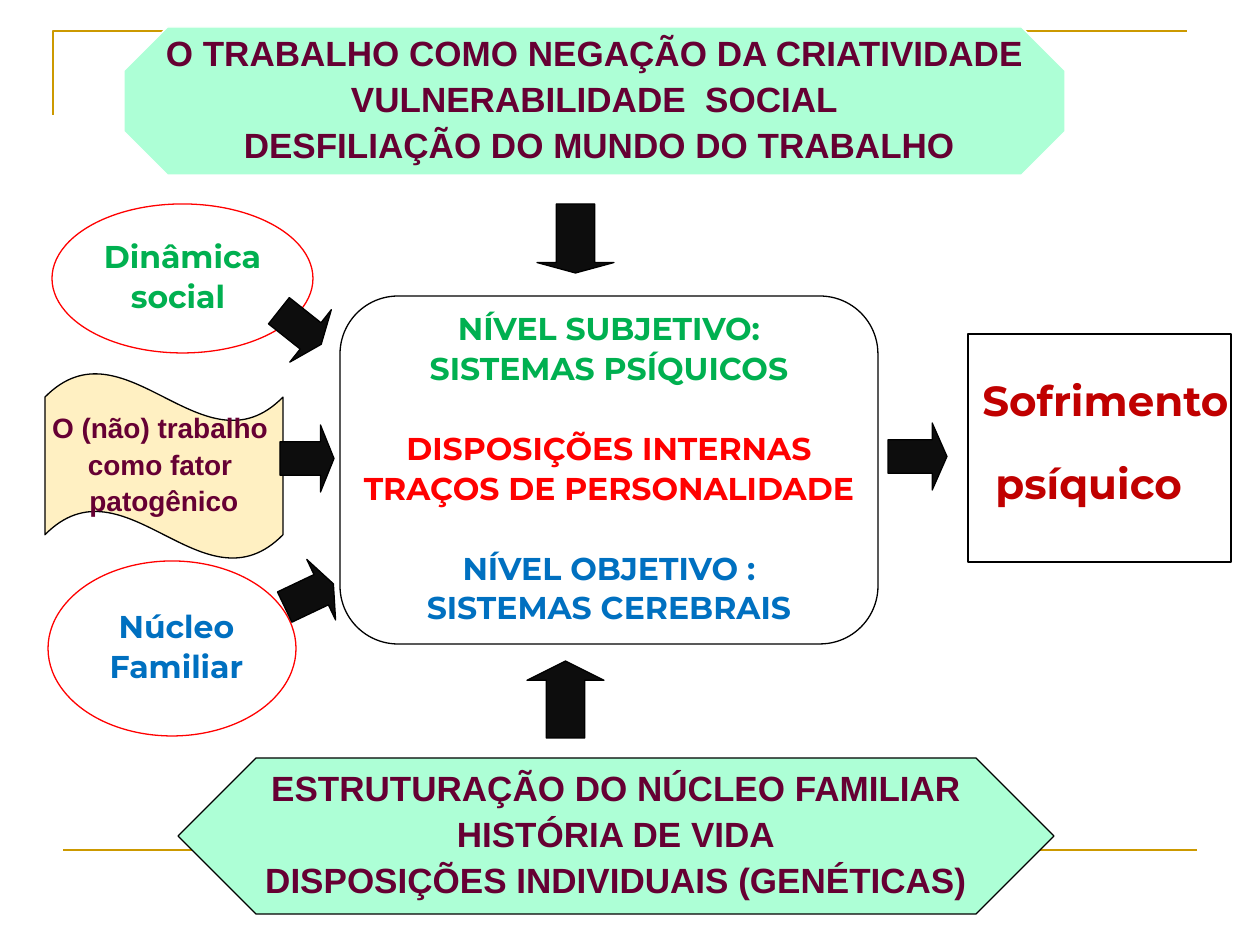
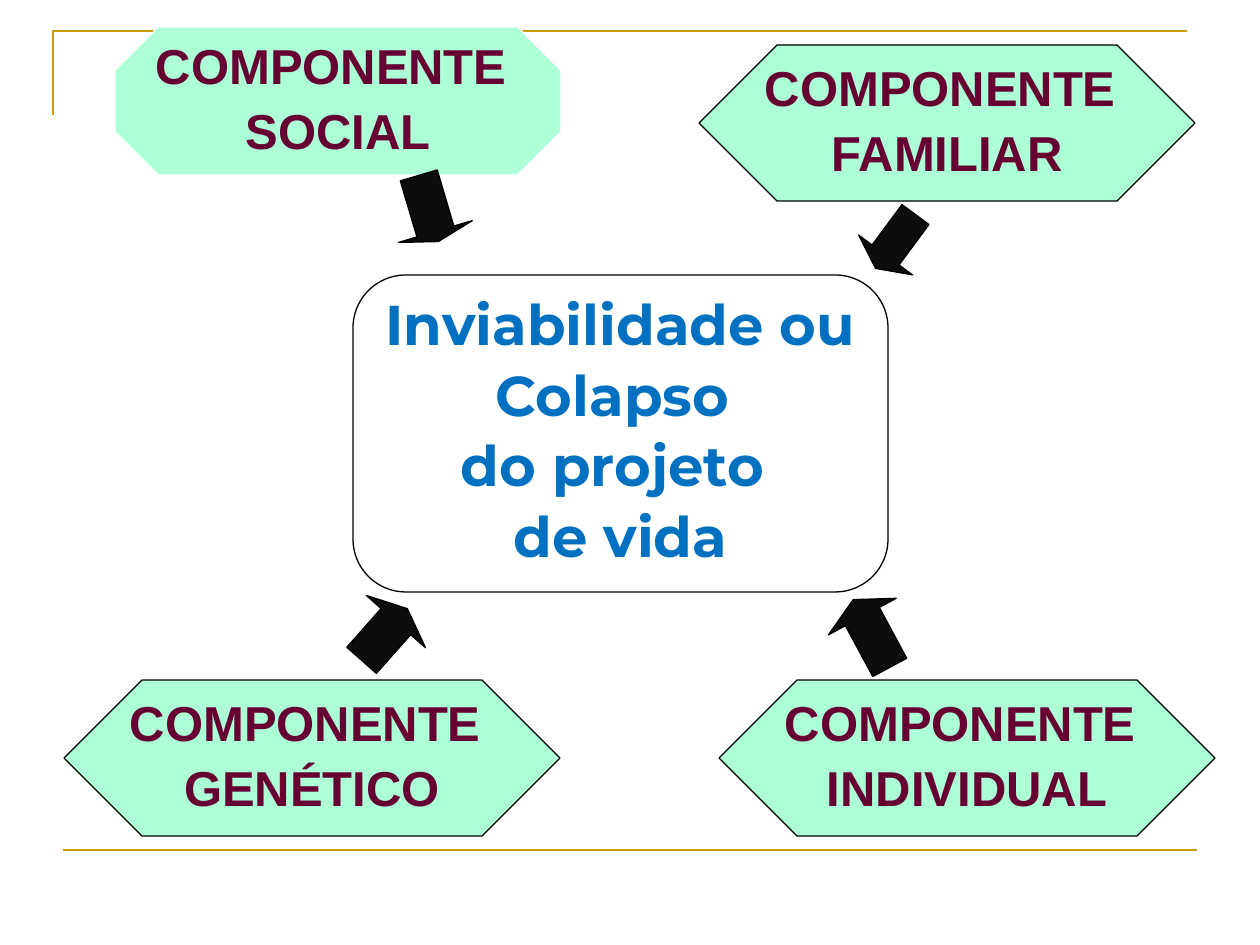
import pptx
import pptx.dml.color
import pptx.enum.shapes
import pptx.enum.text
import pptx.oxml.ns
import pptx.util

SHAPE = pptx.enum.shapes.MSO_SHAPE
PX = 914400 / 126

MINT, CREAM, WHITE, BLACK, INK = "ADFFD6", "FFF0C2", "FFFFFF", "000000", "0D0D0D"
GOLD, PLUM, GREEN = "CC9900", "660033", "00B050"
RED, DARK_RED, BLUE = "FF0000", "C00000", "0070C0"

# Space before a paragraph, as a share of the text size
SPACE_SHARE = {"Arial": 0.24, "Montserrat": 0.18}


def emu(px):
    return round(px * PX)


def rgb(value):
    return pptx.dml.color.RGBColor.from_string(value)


def set_all(obj, **values):
    for name, value in values.items():
        setattr(obj, name, value)


def inside(box, dx, dy, w, h):
    """Box of size w, h at an offset from the corner of another box."""
    return box[0] + dx, box[1] + dy, w, h


def add_shape(slide, kind, box, fill=WHITE, line=BLACK, adj=(), rotation=0):
    sp = slide.shapes.add_shape(kind, *map(emu, box))
    sp.shadow.inherit = False
    sp.rotation = rotation
    for i, value in enumerate(adj):
        sp.adjustments[i] = value
    sp.fill.solid()
    sp.fill.fore_color.rgb = rgb(fill)
    sp.line.color.rgb = rgb(line)
    sp.line.width = pptx.util.Pt(0.75)
    return sp


def add_run(p, text, size, color, font):
    r = p.add_run()
    r.text = text
    set_all(r.font, name=font, size=pptx.util.Pt(size), bold=True)
    r.font.color.rgb = rgb(color)


def write(sp, lines, size, color, font="Montserrat", gap=0):
    """Write centred lines; gap is extra space in points before the paragraph."""
    tf = sp.text_frame
    set_all(tf, word_wrap=False,
            vertical_anchor=pptx.enum.text.MSO_ANCHOR.MIDDLE)
    for line in lines:
        p = tf.add_paragraph() if tf.paragraphs[0].runs else tf.paragraphs[0]
        space = SPACE_SHARE[font] * size + (gap if line == lines[0] else 0)
        set_all(p, alignment=pptx.enum.text.PP_ALIGN.CENTER, line_spacing=0.9,
                space_before=pptx.util.Pt(space))
        add_run(p, line, size, color, font)
    return p


def arrow(slide, box, rotation=0, head=0.25):
    add_shape(slide, SHAPE.RIGHT_ARROW, box, INK, adj=(0.5, head),
              rotation=rotation)


def banner(slide, box, lines, size):
    sp = add_shape(slide, SHAPE.OCTAGON, box, MINT, WHITE, adj=(0.293,))
    write(sp, lines, size, PLUM, "Arial")


def hexagon(slide, box, lines, size):
    sp = add_shape(slide, SHAPE.OCTAGON, box, MINT, adj=(0.5,))
    write(sp, lines, size, PLUM, "Arial")


def core(slide, box, groups, size):
    """Rounded centre box; groups of lines are set one blank line apart."""
    sp = add_shape(slide, SHAPE.FLOWCHART_ALTERNATE_PROCESS, box)
    for i, (color, lines) in enumerate(groups):
        write(sp, lines, size, color, gap=1.28 * size if i else 0)


def frame(slide, box):
    """Gold corner at the top left and gold rule at the bottom."""
    x, y, w, h = box
    builder = slide.shapes.build_freeform(emu(x), emu(y + 84))
    builder.add_line_segments(
        [(emu(x), emu(y)), (emu(x + w), emu(y))], close=False)
    corner = builder.convert_to_shape()
    corner.shadow.inherit = False
    corner.fill.background()
    rule = slide.shapes.add_connector(
        pptx.enum.shapes.MSO_CONNECTOR.STRAIGHT,
        *map(emu, (x + 10, y + h, x + 10 + w, y + h)))
    props = rule._element.spPr
    for sp in (corner, rule):
        sp.line.color.rgb = rgb(GOLD)
        sp.line.width = pptx.util.Pt(1.5)
    props.append(props.makeelement(pptx.oxml.ns.qn("a:effectLst"), {}))


def influences(slide, box):
    """Left column: three factors, each with an arrow to the centre."""
    social = add_shape(slide, SHAPE.OVAL, inside(box, 7, 0, 261, 149), line=RED)
    write(social, ["Dinâmica", "social "], 18, GREEN)
    work = add_shape(slide, SHAPE.WAVE, inside(box, 0, 169, 238, 186), CREAM,
                     adj=(0.13, 0))
    write(work, ["O (não) trabalho ", "como fator ", "patogênico"], 16, PLUM,
          "Arial")
    family = add_shape(slide, SHAPE.OVAL, inside(box, 3, 357, 248, 175), line=RED)
    write(family, [" Núcleo", " Familiar"], 18, BLUE)
    for dx, dy, rotation in ((235, 221, 0), (228, 90, 38.4), (237, 358, 334.6)):
        arrow(slide, inside(box, dx, dy, 54, 67), rotation)


def outcome(slide, box):
    arrow(slide, inside(box, 0, 89, 59, 67))
    sp = add_shape(slide, SHAPE.RECTANGLE, inside(box, 80, 0, 263, 228))
    p = write(sp, [" Sofrimento", "psíquico"], 24, DARK_RED)
    add_run(p, " ", 44, GREEN, "Montserrat")


def suffering_slide(slide):
    banner(slide, (124, 27, 941, 148),
           ["O TRABALHO COMO NEGAÇÃO DA CRIATIVIDADE",
            "VULNERABILIDADE  SOCIAL",
            " DESFILIAÇÃO DO MUNDO DO TRABALHO"], 20)
    core(slide, (340, 296, 538, 348),
         [(GREEN, ["NÍVEL SUBJETIVO:", "SISTEMAS PSÍQUICOS"]),
          (RED, ["DISPOSIÇÕES INTERNAS", "TRAÇOS DE PERSONALIDADE"]),
          (BLUE, ["NÍVEL OBJETIVO :", "SISTEMAS CEREBRAIS"])], 18)
    outcome(slide, (888, 334, 343, 228))
    hexagon(slide, (178, 758, 876, 156),
            ["ESTRUTURAÇÃO DO NÚCLEO FAMILIAR", "HISTÓRIA DE VIDA",
             "DISPOSIÇÕES INDIVIDUAIS (GENÉTICAS)"], 20)
    influences(slide, (45, 204, 290, 533))
    arrow(slide, (527, 661, 77, 77), 270)
    arrow(slide, (541, 200, 69, 77), 90, 0.151)


def collapse_slide(slide):
    banner(slide, (115, 27, 446, 148), ["COMPONENTE ", "SOCIAL"], 28)
    core(slide, (353, 275, 535, 317),
         [(BLUE, ["Inviabilidade ou", "Colapso ", "do projeto ", "de vida"])],
         32)
    for x, y, name in ((699, 45, "FAMILIAR"), (719, 680, "INDIVIDUAL"),
                       (64, 680, "GENÉTICO")):
        hexagon(slide, (x, y, 496, 156), ["COMPONENTE ", name], 28)
    arrow(slide, (394, 170, 69, 77), 73.5, 0.151)
    arrow(slide, (862, 208, 67, 67), 126.5)
    arrow(slide, (833, 595, 77, 77), 241.7)
    arrow(slide, (350, 595, 69, 79), 311.5)


def main():
    prs = pptx.Presentation()
    set_all(prs, slide_width=emu(1260), slide_height=emu(945))
    for build in (suffering_slide, collapse_slide):
        slide = prs.slides.add_slide(prs.slide_layouts[6])
        frame(slide, (53, 31, 1134, 819))
        build(slide)
    prs.save("out.pptx")


if __name__ == "__main__":
    main()
